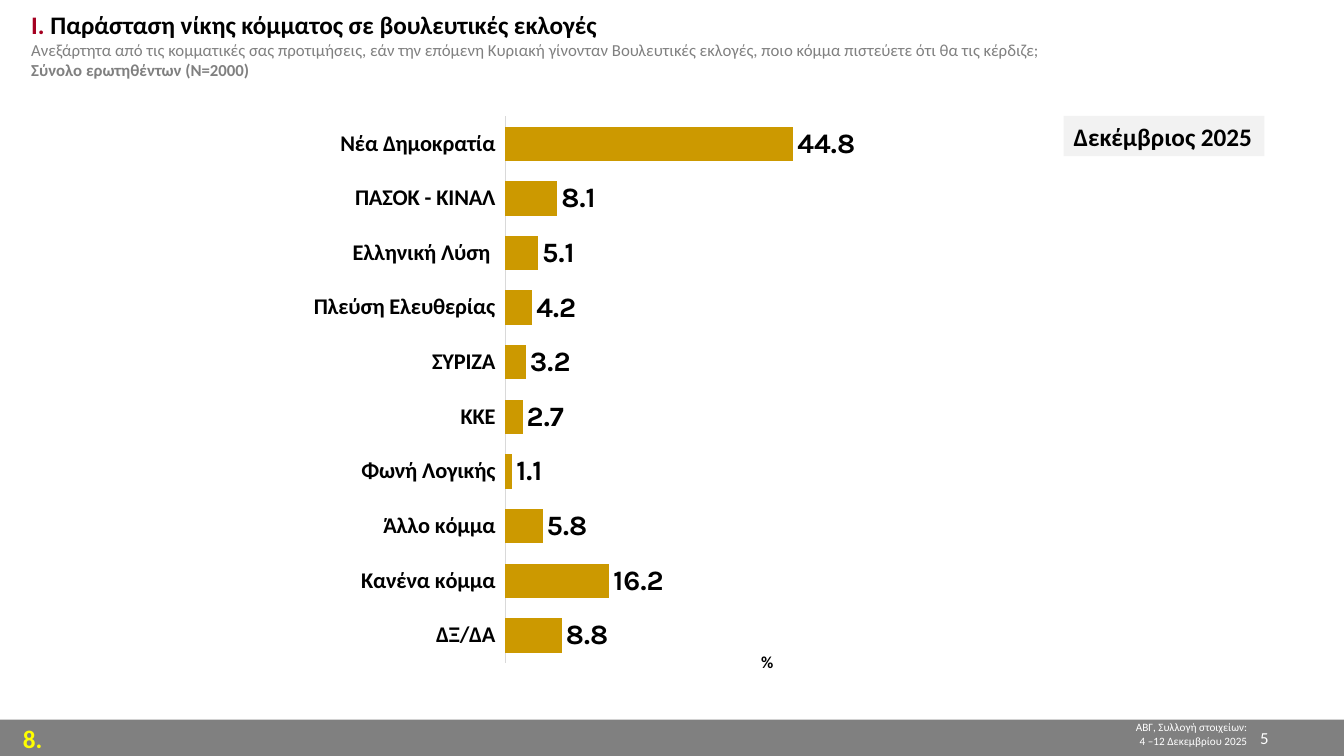
from lxml.etree import SubElement
from pptx import Presentation
from pptx.chart.data import CategoryChartData
from pptx.dml.color import RGBColor
from pptx.enum.chart import XL_CHART_TYPE, XL_LABEL_POSITION, XL_TICK_LABEL_POSITION, XL_TICK_MARK
from pptx.enum.shapes import MSO_SHAPE
from pptx.enum.text import MSO_ANCHOR, MSO_AUTO_SIZE, PP_ALIGN
from pptx.oxml.ns import qn
from pptx.util import Inches, Pt

BLACK = RGBColor(0x00, 0x00, 0x00)
WHITE = RGBColor(0xFF, 0xFF, 0xFF)
GREY = RGBColor(0x80, 0x80, 0x80)
PALE_GREY = RGBColor(0xF2, 0xF2, 0xF2)
AXIS_GREY = RGBColor(0xD9, 0xD9, 0xD9)
CRIMSON = RGBColor(0xA5, 0x00, 0x21)
YELLOW = RGBColor(0xFF, 0xFF, 0x00)
GOLD = RGBColor(0xCC, 0x99, 0x00)
TEXT_FONT = "Calibri"
NUMBER_FONT = "Karla"

PARTY_SHARES = {
    "Νέα Δημοκρατία": 44.8,
    "ΠΑΣΟΚ - ΚΙΝΑΛ": 8.1,
    "Ελληνική Λύση ": 5.1,
    "Πλεύση Ελευθερίας": 4.2,
    "ΣΥΡΙΖΑ": 3.2,
    "ΚΚΕ": 2.7,
    "Φωνή Λογικής": 1.1,
    "Άλλο κόμμα": 5.8,
    "Κανένα κόμμα": 16.2,
    "ΔΞ/ΔΑ": 8.8,
}
PLOT_LAYOUT = {"x": 0.4, "y": 0, "w": 0.6, "h": 1}


def style_font(font, size, color, bold=False, name=TEXT_FONT):
    font.name = name
    font.size = Pt(size)
    font.bold = bold
    font.color.rgb = color


def add_span(para, text, size, color, bold=False):
    span = para.add_run()
    span.text = text
    style_font(span.font, size, color, bold)


def add_panel(page, left, top, width, height, color):
    panel = page.shapes.add_shape(
        MSO_SHAPE.RECTANGLE, Inches(left), Inches(top), Inches(width), Inches(height))
    panel.shadow.inherit = False
    panel.fill.solid()
    panel.fill.fore_color.rgb = color
    panel.line.fill.background()
    return panel


def write_lines(box, lines, size, color, bold=False, align=PP_ALIGN.LEFT, wrap=True):
    frame = box.text_frame
    frame.word_wrap = wrap
    frame.vertical_anchor = MSO_ANCHOR.TOP
    for index, line in enumerate(lines):
        para = frame.add_paragraph() if index else frame.paragraphs[0]
        para.alignment = align
        add_span(para, line, size, color, bold)


def add_label(page, left, top, width, height, lines, size, color, **style):
    box = page.shapes.add_textbox(Inches(left), Inches(top), Inches(width), Inches(height))
    write_lines(box, lines, size, color, **style)


def add_title(page):
    title = page.shapes.title
    title.left, title.top = Inches(0.21), Inches(-0.18)
    title.width, title.height = Inches(10.71), Inches(1.25)
    frame = title.text_frame
    frame.word_wrap = True
    frame.auto_size = MSO_AUTO_SIZE.NONE
    frame.vertical_anchor = MSO_ANCHOR.MIDDLE
    para = frame.paragraphs[0]
    para.alignment = PP_ALIGN.LEFT
    add_span(para, "Ι. ", 18, CRIMSON, True)
    add_span(para, "Παράσταση νίκης κόμματος σε βουλευτικές εκλογές", 18, BLACK, True)
    para.add_line_break()
    add_span(para, "Ανεξάρτητα από τις κομματικές σας προτιμήσεις, εάν την επόμενη Κυριακή "
             "γίνονταν Βουλευτικές εκλογές, ποιο κόμμα πιστεύετε ότι θα τις κέρδιζε;", 12, GREY)
    para.add_line_break()
    add_span(para, "Σύνολο ερωτηθέντων (Ν=2000)", 12, GREY, True)


def set_plot_layout(chart):
    plot_area = chart._chartSpace.chart.plotArea
    for old_layout in plot_area.findall(qn("c:layout")):
        plot_area.remove(old_layout)
    layout = SubElement(plot_area, qn("c:layout"))
    plot_area.insert(0, layout)
    manual = SubElement(layout, qn("c:manualLayout"))
    settings = {"layoutTarget": "inner", "xMode": "edge", "yMode": "edge", **PLOT_LAYOUT}
    for tag, value in settings.items():
        SubElement(manual, qn(f"c:{tag}")).set("val", str(value))


def add_share_chart(page):
    shares = CategoryChartData(number_format="0.0")
    shares.categories = list(PARTY_SHARES)
    shares.add_series("Series 1", list(PARTY_SHARES.values()))
    chart = page.shapes.add_chart(
        XL_CHART_TYPE.BAR_CLUSTERED, Inches(0.76), Inches(1.15),
        Inches(10.63), Inches(5.43), shares).chart
    chart.has_title = False
    chart.has_legend = False
    style_font(chart.font, 10, BLACK, name=NUMBER_FONT)
    set_plot_layout(chart)

    parties = chart.category_axis
    parties.reverse_order = True
    parties.major_tick_mark = XL_TICK_MARK.NONE
    parties.tick_label_position = XL_TICK_LABEL_POSITION.LOW
    parties.format.line.color.rgb = AXIS_GREY
    parties.format.line.width = Pt(0.75)
    style_font(parties.tick_labels.font, 16, BLACK, True)

    percent = chart.value_axis
    percent.visible = False
    percent.has_major_gridlines = False
    percent.minimum_scale = 0
    percent.maximum_scale = 100
    percent.major_unit = 50

    plot = chart.plots[0]
    plot.gap_width = 59
    plot.vary_by_categories = False
    bars = plot.series[0]
    bars.format.fill.solid()
    bars.format.fill.fore_color.rgb = GOLD
    labels = bars.data_labels
    labels.show_value = True
    labels.position = XL_LABEL_POSITION.OUTSIDE_END
    style_font(labels.font, 20, BLACK, True, NUMBER_FONT)


def add_footer(page):
    add_panel(page, 0, 7.14, 13.33, 0.37, GREY)
    add_label(page, 9.58, 7.1, 2.89, 0.37,
              ["ΑΒΓ, Συλλογή στοιχείων:", "4 –12 Δεκεμβρίου 2025"], 8, WHITE,
              align=PP_ALIGN.RIGHT)
    add_label(page, 0.13, 7.13, 0.67, 0.4, ["8."], 18, YELLOW, bold=True)
    add_label(page, 10.6, 7.17, 2.08, 0.3, ["5"], 12, WHITE, align=PP_ALIGN.RIGHT)


def main():
    deck = Presentation()
    deck.slide_width, deck.slide_height = Inches(13.33), Inches(7.5)
    page = deck.slides.add_slide(deck.slide_layouts[5])
    add_footer(page)
    add_title(page)
    add_share_chart(page)
    add_label(page, 7.45, 6.42, 0.32, 0.3, ["%"], 12, BLACK, bold=True, wrap=False)
    survey_date = add_panel(page, 10.55, 1.15, 1.99, 0.4, PALE_GREY)
    write_lines(survey_date, ["Δεκέμβριος 2025"], 18, BLACK, bold=True, wrap=False)
    deck.save("out.pptx")


if __name__ == "__main__":
    main()
